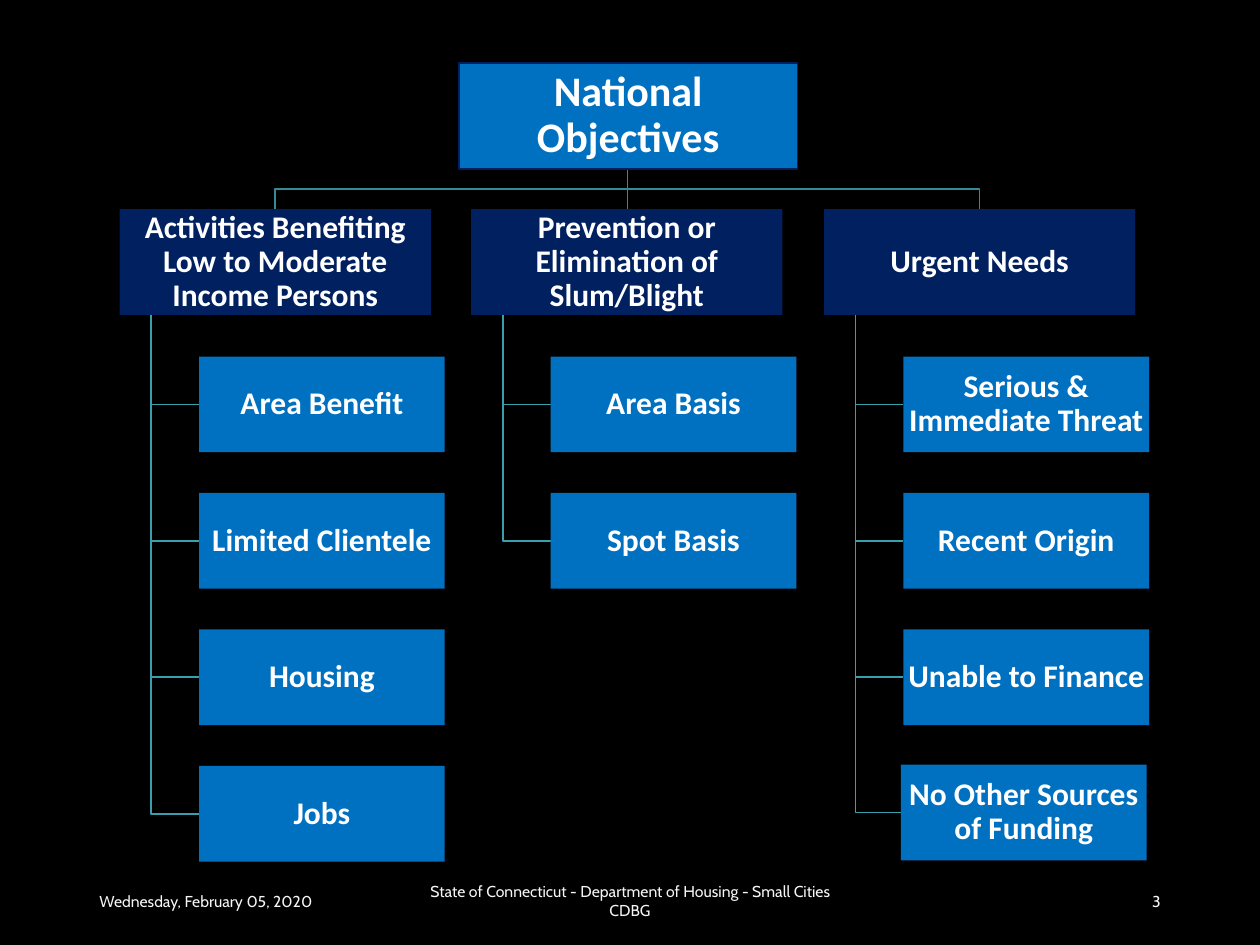
from pptx import Presentation
from pptx.util import Inches, Pt
from pptx.dml.color import RGBColor
from pptx.enum.shapes import MSO_SHAPE as Shape
from pptx.enum.text import PP_ALIGN as Align, MSO_ANCHOR as Anchor

BLUE, NAVY, WHITE = "0070C0", "002060", "FFFFFF"


def paint(fmt, color):
    """Fill a shape, line or background with a solid hex colour."""
    fmt.solid()
    fmt.fore_color.rgb = RGBColor.from_string(color)


def write(shape, text, size, face, color, align, bold=False):
    frame = shape.text_frame
    frame.word_wrap = True
    frame.vertical_anchor = Anchor.MIDDLE
    frame.text = text
    para = frame.paragraphs[0]
    para.alignment = align
    font = para.runs[0].font
    font.size, font.name, font.bold = Pt(size), face, bold
    paint(font.fill, color)


prs = Presentation()
prs.slide_width, prs.slide_height = Inches(10), Inches(7.5)
slide = prs.slides.add_slide(prs.slide_layouts[6])
paint(slide.background.fill, "000000")

# Chart content and grid
heads = [
    (0.95, "Activities Benefiting Low to Moderate Income Persons",
     ["Area Benefit", "Limited Clientele", "Housing", "Jobs"]),
    (3.74, "Prevention or Elimination of Slum/Blight",
     ["Area Basis", "Spot Basis"]),
    (6.54, "Urgent Needs",
     ["Serious & Immediate Threat", "Recent Origin", "Unable to Finance",
      "No Other Sources of Funding"]),
]
root_x, root_y, root_w = 3.64, 0.5, 2.69
head_y, head_w, head_h = 1.66, 2.47, 0.84
leaf_y, leaf_w, leaf_h, step = 2.83, 1.95, 0.76, 1.083
indent, trunk = 0.63, 0.25
mid = 4.98
root_end, head_end = root_y + head_h, head_y + head_h
fork = (root_end + head_y) / 2

# Collect boxes and the lines that join them
boxes = [(root_x, root_y, root_w, head_h, BLUE, "National Objectives", 24)]
lines = []
for x, title, leaves in heads:
    boxes.append((x, head_y, head_w, head_h, NAVY, title, 18))
    top = x + head_w / 2
    if abs(top - mid) < 0.05:
        route = [(mid, root_end), (mid, head_y)]
    else:
        route = [(mid, root_end), (mid, fork), (top, fork), (top, head_y)]
    lines.append(("348B97", route))
    for row, leaf in enumerate(leaves):
        left, y = x + indent, leaf_y + row * step
        if leaf.startswith("No Other"):  # sits slightly off the grid
            left, y = left - 0.02, y - 0.01
        boxes.append((left, y, leaf_w, leaf_h, BLUE, leaf, 18))
        stem, level = x + trunk, y + leaf_h / 2
        lines.append(("3B9EAC", [(stem, head_end), (stem, level), (left, level)]))

# Connecting lines
for color, route in lines:
    pts = [(Inches(x), Inches(y)) for x, y in route]
    path = slide.shapes.build_freeform(*pts[0])
    path.add_line_segments(pts[1:], close=False)
    wire = path.convert_to_shape()
    wire.shadow.inherit = False
    wire.fill.background()
    paint(wire.line.fill, color)
    wire.line.width = Pt(1)

# Boxes
for x, y, w, h, color, text, size in boxes:
    box = slide.shapes.add_shape(
        Shape.RECTANGLE, Inches(x), Inches(y), Inches(w), Inches(h))
    box.shadow.inherit = False
    paint(box.fill, color)
    if size == 24:
        paint(box.line.fill, NAVY)
        box.line.width = Pt(1)
    else:
        box.line.fill.background()
    write(box, text, size, "Calibri", WHITE, Align.CENTER, True)
    frame = box.text_frame
    pad = Inches(0.02 if size == 24 else 0.01)
    frame.margin_left = frame.margin_right = pad
    frame.margin_top = frame.margin_bottom = pad
    frame.paragraphs[0].line_spacing = 0.9

# Footer
for x, w, text, align in [
    (0.69, 2.25, "Wednesday, February 05, 2020", Align.LEFT),
    (3.31, 3.38, "State of Connecticut - Department of Housing - Small Cities CDBG",
     Align.CENTER),
    (7.06, 2.25, "3", Align.RIGHT),
]:
    note = slide.shapes.add_textbox(Inches(x), Inches(6.95), Inches(w), Inches(0.4))
    write(note, text, 9, "Cabin", "F5F5F5", align)

prs.save("out.pptx")
